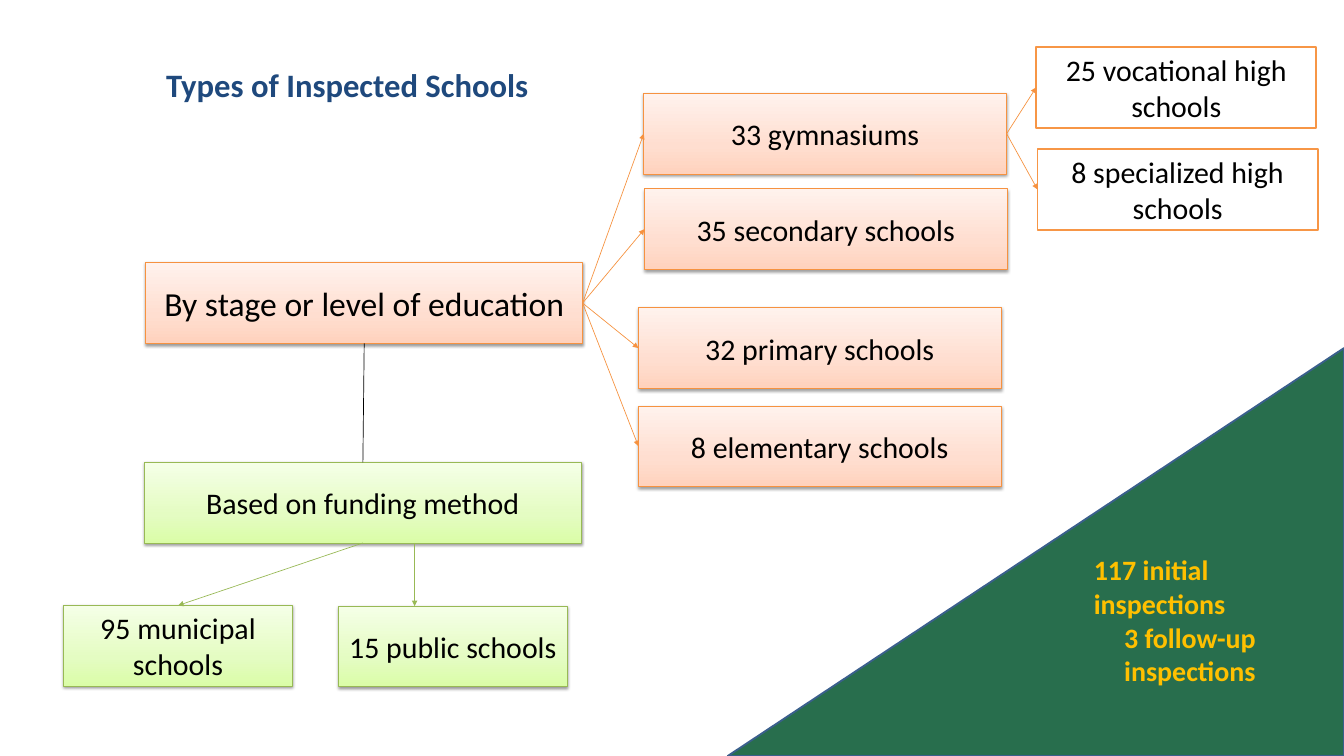
"""Build a slide that sorts inspected schools by stage and by funding."""
from dataclasses import dataclass

from lxml import etree
from pptx import Presentation
from pptx.dml.color import RGBColor
from pptx.enum import shapes, text
from pptx.oxml import ns
from pptx.util import Inches, Pt

INK = {
    "title": "1F497D", "black": "000000", "white": "FFFFFF", "gold": "FFC000",
    "pine": "286E4D", "edge": "3A5F8C", "rim": "F79646",
    "peach": "F69240", "lime": "98B955",
}
FADES = {
    "peach": ((0, "FFD2BD"), (35, "FFDED0"), (100, "FFF2ED")),
    "lime": ((0, "DAFDA7"), (35, "E4FCC2"), (100, "F5FFE7")),
}
HIGH = 1.2
TOP, LEFT, BASE, RIGHT = range(4)


@dataclass(frozen=True)
class Box:
    key: str
    label: str
    x: float
    y: float
    wide: float
    tone: str
    size: int = 32


@dataclass(frozen=True)
class Link:
    start: str
    out: int
    end: str
    into: int
    tone: str
    arrow: bool = True


BOXES = (
    Box("stage", "By stage or level of education", 2.17, 3.91, 6.5, "peach", 36),
    Box("fund", "Based on funding method", 2.15, 6.88, 6.5, "lime"),
    Box("gym", "33 gymnasiums", 9.58, 1.39, 5.4, "peach"),
    Box("prime", "32 primary schools", 9.5, 4.58, 5.4, "peach"),
    Box("second", "35 secondary schools", 9.59, 2.81, 5.4, "peach"),
    Box("first", "8 elementary schools", 9.5, 6.04, 5.4, "peach"),
    Box("special", "8 specialized high schools", 15.44, 2.22, 4.17, "rim"),
    Box("trade", "25 vocational high schools", 15.42, 0.7, 4.17, "rim"),
    Box("town", "95 municipal schools", 0.95, 9.01, 3.4, "lime"),
    Box("state", "15 public schools", 5.04, 9.02, 3.4, "lime"),
)
LINKS = (
    *(Link("stage", RIGHT, end, LEFT, "peach")
      for end in ("gym", "prime", "second", "first")),
    *(Link("gym", RIGHT, end, LEFT, "peach") for end in ("trade", "special")),
    Link("stage", BASE, "fund", TOP, "black", False),
    Link("fund", BASE, "town", TOP, "lime"),
)


def hue(name: str) -> RGBColor:
    """Return a named colour."""
    return RGBColor.from_string(INK[name])


def add(node, tag: str, **marks):
    """Append a drawing element to a node."""
    return etree.SubElement(node, ns.qn(tag), {k: str(v) for k, v in marks.items()})


def write(para, size: int, tone: str, bold: bool = False, side=text.PP_ALIGN.CENTER) -> None:
    """Format the runs of a paragraph."""
    para.alignment = side
    for run in para.runs:
        run.font.name, run.font.size, run.font.bold = "Calibri", Pt(size), bold
        run.font.color.rgb = hue(tone)


def trim(shape, fill: str, line: str, weight: float) -> None:
    """Give a shape a flat fill and a line."""
    shape.shadow.inherit = False
    shape.fill.solid()
    shape.fill.fore_color.rgb = hue(fill)
    shape.line.color.rgb = hue(line)
    shape.line.width = Pt(weight)
    shape.text_frame.word_wrap = True
    shape.text_frame.vertical_anchor = text.MSO_ANCHOR.MIDDLE


def shade(shape, tone: str) -> None:
    """Swap the flat fill for a fade and add a soft shadow."""
    props = shape.element.spPr
    fade = etree.Element(ns.qn("a:gradFill"), rotWithShape="1")
    stops = add(fade, "a:gsLst")
    for place, code in FADES[tone]:
        add(add(stops, "a:gs", pos=place * 1000), "a:srgbClr", val=code)
    add(fade, "a:lin", ang=270 * 60000, scaled=0)
    props.replace(props.find(ns.qn("a:solidFill")), fade)
    glow = add(props.find(ns.qn("a:effectLst")), "a:outerShdw", blurRad=Pt(3.1),
               dist=Pt(1.6), dir=90 * 60000, rotWithShape=0)
    add(add(glow, "a:srgbClr", val=INK["black"]), "a:alpha", val=38000)


def draw_box(slide, box: Box):
    """Draw one labelled box."""
    shape = slide.shapes.add_shape(
        shapes.MSO_SHAPE.RECTANGLE, Inches(box.x), Inches(box.y),
        Inches(box.wide), Inches(HIGH))
    faded = box.tone in FADES
    trim(shape, "white", box.tone, 0.75 if faded else 2)
    if faded:
        shade(shape, box.tone)
    shape.text_frame.text = box.label
    write(shape.text_frame.paragraphs[0], box.size, "black")
    return shape


def draw_line(slide, tone: str, arrow: bool, x: float = 0, y: float = 0, end: float = 0):
    """Draw a thin upright line, which links may later move."""
    line = slide.shapes.add_connector(
        shapes.MSO_CONNECTOR.STRAIGHT, Inches(x), Inches(y), Inches(x), Inches(end))
    line.line.color.rgb = hue(tone)
    line.line.width = Pt(0.75)
    if arrow:
        add(line.line._get_or_add_ln(), "a:tailEnd", type="triangle")
    add(line.element.spPr, "a:effectLst")
    return line


def draw_title(slide) -> None:
    """Draw the slide title."""
    frame = slide.shapes.add_textbox(
        Inches(1.33), Inches(0.92), Inches(7.68), Inches(0.69)).text_frame
    frame.word_wrap = True
    frame.auto_size = text.MSO_AUTO_SIZE.SHAPE_TO_FIT_TEXT
    frame.text = "Types of Inspected Schools"
    write(frame.paragraphs[0], 35, "title", True)


def draw_wedge(slide) -> None:
    """Draw the corner triangle with the totals."""
    wedge = slide.shapes.add_shape(
        shapes.MSO_SHAPE.RIGHT_TRIANGLE, Inches(12.38), Inches(3.63),
        Inches(6.07), Inches(9.17))
    wedge.rotation = 270
    trim(wedge, "pine", "edge", 2)
    frame = wedge.text_frame
    frame._txBody.bodyPr.set("vert", "vert")
    frame.text = "117 initial inspections\n3 follow-up inspections"
    sides = (text.PP_ALIGN.LEFT, text.PP_ALIGN.CENTER)
    for para, side in zip(frame.paragraphs, sides):
        write(para, 30, "gold", True, side)


def main() -> None:
    """Build and save the slide."""
    deck = Presentation()
    deck.slide_width, deck.slide_height = Inches(20), Inches(11.25)
    slide = deck.slides.add_slide(deck.slide_layouts[6])
    draw_title(slide)
    draw_wedge(slide)
    drawn = {box.key: draw_box(slide, box) for box in BOXES}
    for link in LINKS:
        line = draw_line(slide, link.tone, link.arrow)
        line.begin_connect(drawn[link.start], link.out)
        line.end_connect(drawn[link.end], link.into)
    draw_line(slide, "lime", True, 6.17, 8.08, 9.02)
    deck.save("out.pptx")


if __name__ == "__main__":
    main()
